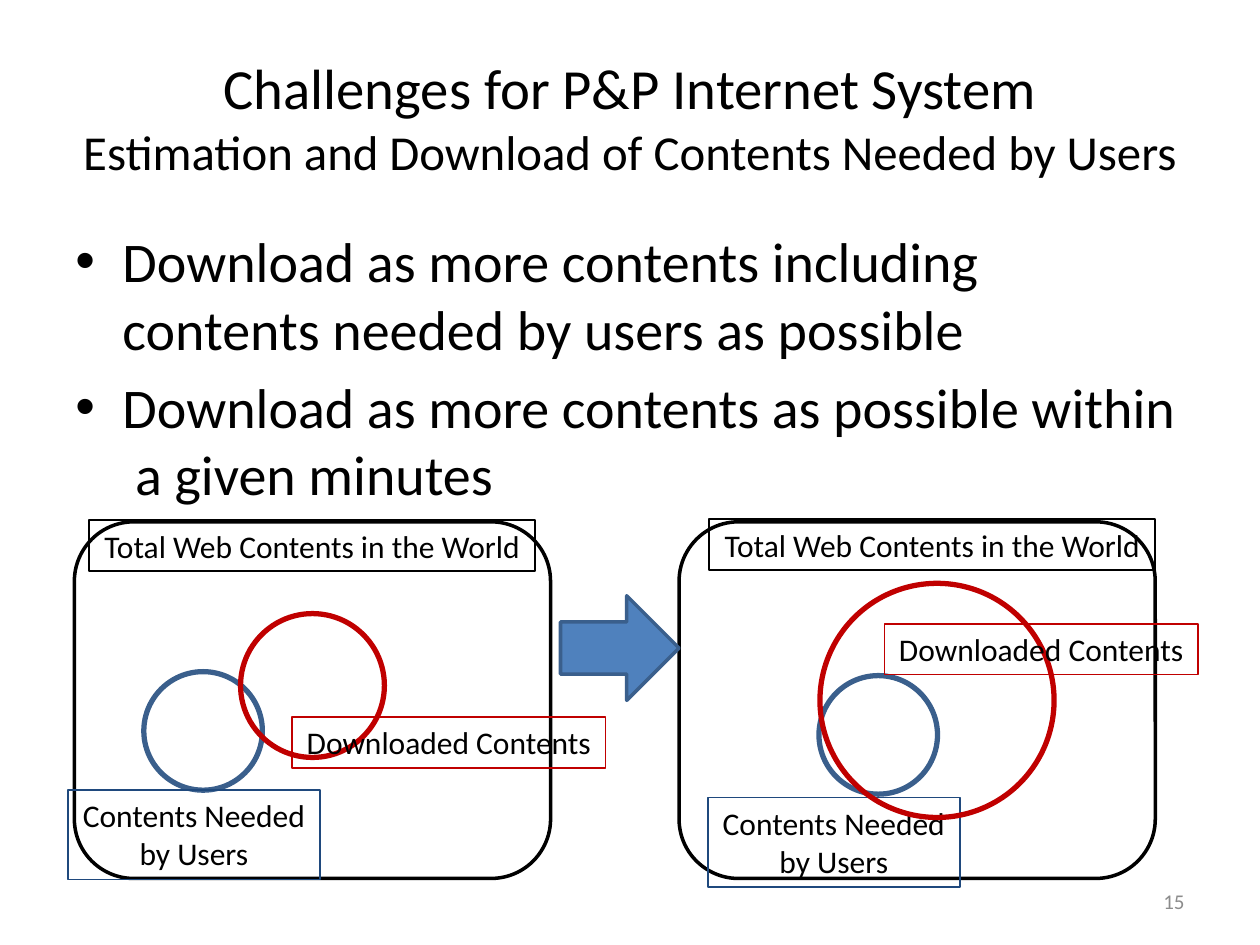
from dataclasses import dataclass

from lxml.etree import SubElement
from pptx import Presentation
from pptx.dml.color import RGBColor
from pptx.enum.shapes import MSO_SHAPE
from pptx.enum.text import MSO_ANCHOR, MSO_AUTO_SIZE, PP_ALIGN
from pptx.oxml.ns import qn
from pptx.util import Cm, Pt


@dataclass(frozen=True)
class Theme:
    font: str = "Calibri"
    ink: str = "000000"
    muted: str = "8C8C8C"
    needed: str = "3A5F8C"
    needed_label: str = "1F497D"
    downloaded: str = "C00000"
    arrow: str = "4F81BD"
    title_size: float = 32.4
    subtitle_size: float = 27.9
    body_size: float = 32
    label_size: float = 18
    number_size: float = 12


THEME = Theme()


@dataclass(frozen=True)
class Layout:
    """Places in cm relative to a panel's top left corner."""
    needed: tuple
    downloaded: tuple
    downloaded_diameter: float
    world_label: tuple
    needed_label: tuple
    downloaded_label: tuple


BEFORE = Layout((1.4, 3.02), (3.35, 1.85), 2.9,
                (0.3, -0.03), (-0.13, 5.41), (4.39, 3.94))
AFTER = Layout((2.82, 3.1), (2.84, 1.24), 4.72,
               (0.61, -0.05), (0.58, 5.56), (4.14, 2.06))


def in_cm(box):
    return [Cm(length) for length in box]


def format_run(run, size, color=THEME.ink):
    run.font.name = THEME.font
    run.font.size = Pt(size)
    run.font.color.rgb = RGBColor.from_string(color)


def set_line(shape, color, width):
    shape.line.color.rgb = RGBColor.from_string(color)
    shape.line.width = Pt(width)


def add_outline(slide, preset, box, color, width, fill=None):
    shape = slide.shapes.add_shape(preset, *in_cm(box))
    shape.shadow.inherit = False
    if fill:
        shape.fill.solid()
        shape.fill.fore_color.rgb = RGBColor.from_string(fill)
    else:
        shape.fill.background()
    set_line(shape, color, width)


def add_label(slide, text, box, color, wrap=False):
    label = slide.shapes.add_textbox(*in_cm(box))
    set_line(label, color, 1)
    frame = label.text_frame
    frame.text = text
    frame.word_wrap = wrap
    frame.auto_size = MSO_AUTO_SIZE.SHAPE_TO_FIT_TEXT
    paragraph = frame.paragraphs[0]
    paragraph.alignment = PP_ALIGN.CENTER
    format_run(paragraph.runs[0], THEME.label_size)


def fill_title(slide, box):
    title = slide.shapes.title
    title.left, title.top, title.width, title.height = in_cm(box)
    frame = title.text_frame
    frame.text = ("Challenges for P&P Internet System\v"
                  "Estimation and Download of Contents Needed by Users")
    frame.auto_size = MSO_AUTO_SIZE.NONE
    frame.vertical_anchor = MSO_ANCHOR.MIDDLE
    paragraph = frame.paragraphs[0]
    paragraph.alignment = PP_ALIGN.CENTER
    for run, size in zip(paragraph.runs, (THEME.title_size, THEME.subtitle_size)):
        format_run(run, size)


def add_bullets(slide, box):
    frame = slide.shapes.add_textbox(*in_cm(box)).text_frame
    frame.word_wrap = True
    frame.text = (
        "Download as more contents including contents needed by users as possible\n"
        "Download as more contents as possible within  a given minutes")
    for paragraph in frame.paragraphs:
        paragraph.space_before = Pt(0.2 * THEME.body_size)
        format_run(paragraph.runs[0], THEME.body_size)
        properties = paragraph._p.get_or_add_pPr()
        properties.set("marL", str(Cm(0.95)))
        properties.set("indent", str(Cm(-0.95)))
        SubElement(properties, qn("a:buFont"), typeface="Arial")
        SubElement(properties, qn("a:buChar"), char="•")


def add_panel(slide, box, layout):
    """Draw the world of web contents with its two overlapping sets."""
    left, top = box[:2]

    def place(offset, width, height):
        return left + offset[0], top + offset[1], width, height

    add_outline(slide, MSO_SHAPE.OVAL, place(layout.needed, 2.39, 2.39),
                THEME.needed, 3)
    add_outline(slide, MSO_SHAPE.ROUNDED_RECTANGLE, box, THEME.ink, 2)
    add_label(slide, "Contents Needed by Users",
              place(layout.needed_label, 5.08, 1.8), THEME.needed_label, wrap=True)
    diameter = layout.downloaded_diameter
    add_outline(slide, MSO_SHAPE.OVAL, place(layout.downloaded, diameter, diameter),
                THEME.downloaded, 3)
    add_label(slide, "Downloaded Contents",
              place(layout.downloaded_label, 6.32, 1.02), THEME.downloaded)
    add_label(slide, "Total Web Contents in the World",
              place(layout.world_label, 8.99, 1.02), THEME.ink)


def add_page_number(slide, box):
    frame = slide.shapes.add_textbox(*in_cm(box)).text_frame
    frame.text = "15"
    frame.word_wrap = True
    frame.vertical_anchor = MSO_ANCHOR.MIDDLE
    paragraph = frame.paragraphs[0]
    paragraph.alignment = PP_ALIGN.RIGHT
    format_run(paragraph.runs[0], THEME.number_size, THEME.muted)


def main():
    deck = Presentation()
    deck.slide_width, deck.slide_height = Cm(25.4), Cm(19.05)
    slide = deck.slides.add_slide(deck.slide_layouts[5])
    fill_title(slide, (1.27, 0.76, 22.86, 3.18))
    add_bullets(slide, (1.27, 4.45, 22.86, 12.57))
    add_page_number(slide, (18.2, 17.65, 5.93, 1.02))
    for left, layout in ((1.5, BEFORE), (13.69, AFTER)):
        add_panel(slide, (left, 10.52, 9.6, 7.19), layout)
    add_outline(slide, MSO_SHAPE.RIGHT_ARROW, (11.3, 12.01, 2.39, 2.11),
                THEME.needed, 2, fill=THEME.arrow)
    deck.save("out.pptx")


if __name__ == "__main__":
    main()
